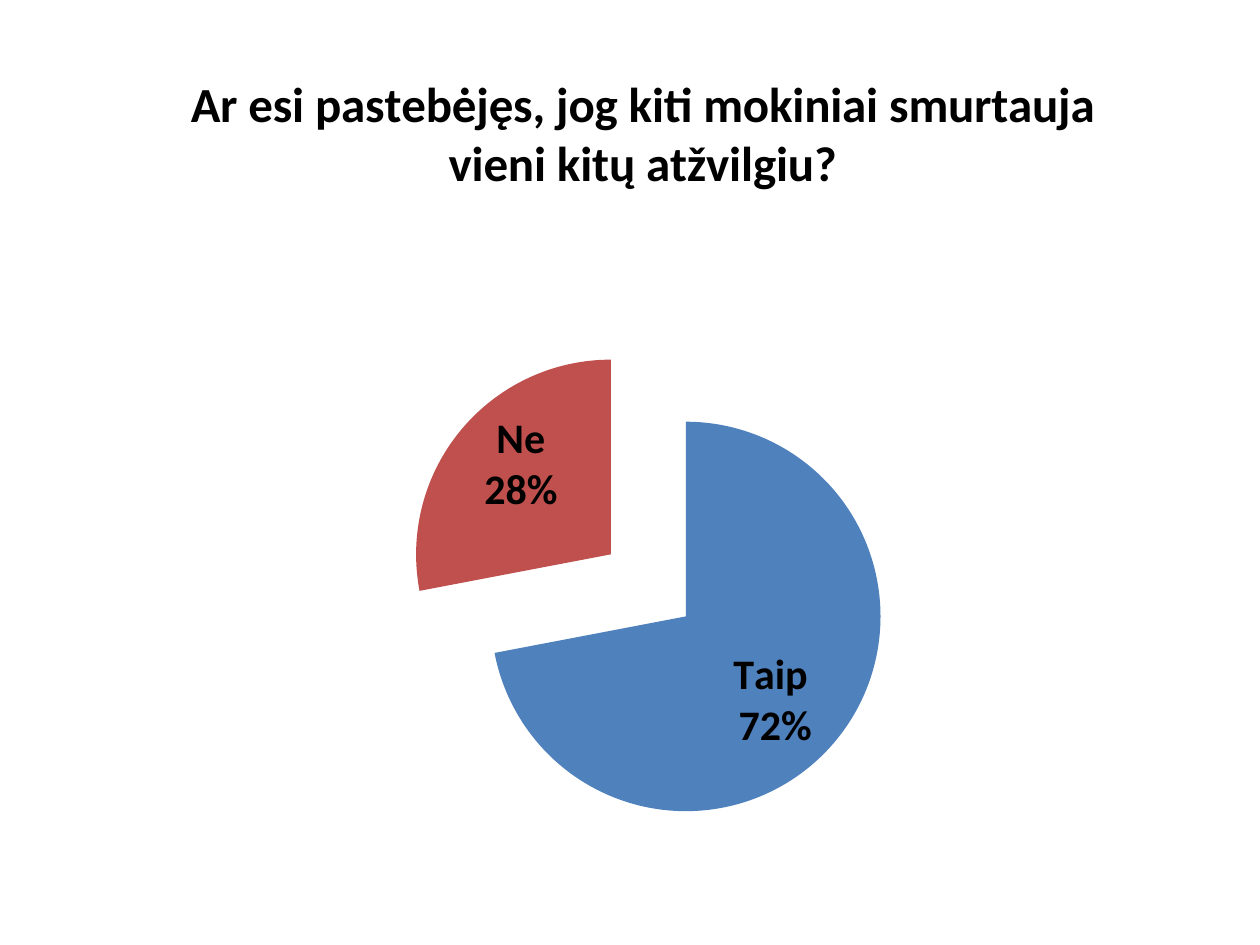
from lxml.etree import SubElement
from pptx import Presentation
from pptx.chart.data import CategoryChartData
from pptx.dml.color import RGBColor
from pptx.enum.chart import XL_CHART_TYPE, XL_LABEL_POSITION
from pptx.oxml.ns import qn
from pptx.util import Inches, Pt

COLORS = {"text": "000000", "yes": "4F81BD", "no": "C0504D"}
FACE = "Calibri"
WIDE, HIGH = Inches(10), Inches(7.5)


def style(font, size, bold=False):
    """Set face, size, weight and colour of a font."""
    font.name, font.size, font.bold = FACE, Pt(size), bold
    font.color.rgb = RGBColor.from_string(COLORS["text"])


def add_pie(slide, box, rows):
    """Add a pie chart whose box is given as shares of the slide."""
    data = CategoryChartData()
    data.categories = [name for name, _ in rows]
    data.add_series("Series 1", [value for _, value in rows])
    left, top, width, height = box
    frame = slide.shapes.add_chart(
        XL_CHART_TYPE.PIE, int(left * WIDE), int(top * HIGH),
        int(width * WIDE), int(height * HIGH), data)
    chart = frame.chart
    chart.has_legend = False
    style(chart.font, 10)
    return chart


def add_title(chart, text):
    """Write the chart title."""
    chart.has_title = True
    run = chart.chart_title.text_frame.paragraphs[0].add_run()
    run.text = text
    style(run.font, 28, True)
    chart.chart_title.include_in_layout = False


def place_plot(chart, box):
    """Fix the inner plot area as shares of the chart."""
    area = chart._chartSpace.chart.plotArea
    for old in area.findall(qn("c:layout")):
        area.remove(old)
    layout = SubElement(area, qn("c:layout"))
    area.insert(0, layout)
    manual = SubElement(layout, qn("c:manualLayout"))
    parts = [("layoutTarget", "inner"), ("xMode", "edge"), ("yMode", "edge")]
    for tag, value in parts + list(zip("xywh", box)):
        SubElement(manual, qn(f"c:{tag}")).set("val", str(value))


def paint_slices(series, colors, gap):
    """Colour the slices and pull them apart by a percentage."""
    burst = SubElement(series._element, qn("c:explosion"))
    burst.set("val", str(gap))
    series._element.find(qn("c:cat")).addprevious(burst)
    for index, color in enumerate(colors):
        fill = series.points[index].format.fill
        fill.solid()
        fill.fore_color.rgb = RGBColor.from_string(COLORS[color])


def add_labels(series):
    """Show name and percentage on two lines in each slice."""
    labels = series.data_labels
    style(labels.font, 24, True)
    labels.show_category_name = labels.show_percentage = True
    labels.show_value = False
    labels.position = XL_LABEL_POSITION.BEST_FIT
    root = labels._element
    mark = SubElement(root, qn("c:separator"))
    mark.text = "\n"
    root.find(qn("c:showBubbleSize")).addnext(mark)


def main():
    """Build the survey slide."""
    deck = Presentation()
    deck.slide_width, deck.slide_height = WIDE, HIGH
    slide = deck.slides.add_slide(deck.slide_layouts[6])
    chart = add_pie(slide, (0.05, 0.04, 0.92, 0.92), [("Taip ", 72), ("Ne", 28)])
    add_title(chart, "Ar esi pastebėjęs, jog kiti mokiniai smurtauja vieni kitų atžvilgiu?")
    place_plot(chart, (0.1, 0.35, 0.81, 0.56))
    plot = chart.plots[0]
    plot.vary_by_categories = True
    series = plot.series[0]
    paint_slices(series, ("yes", "no"), 25)
    add_labels(series)
    deck.save("out.pptx")


if __name__ == "__main__":
    main()
